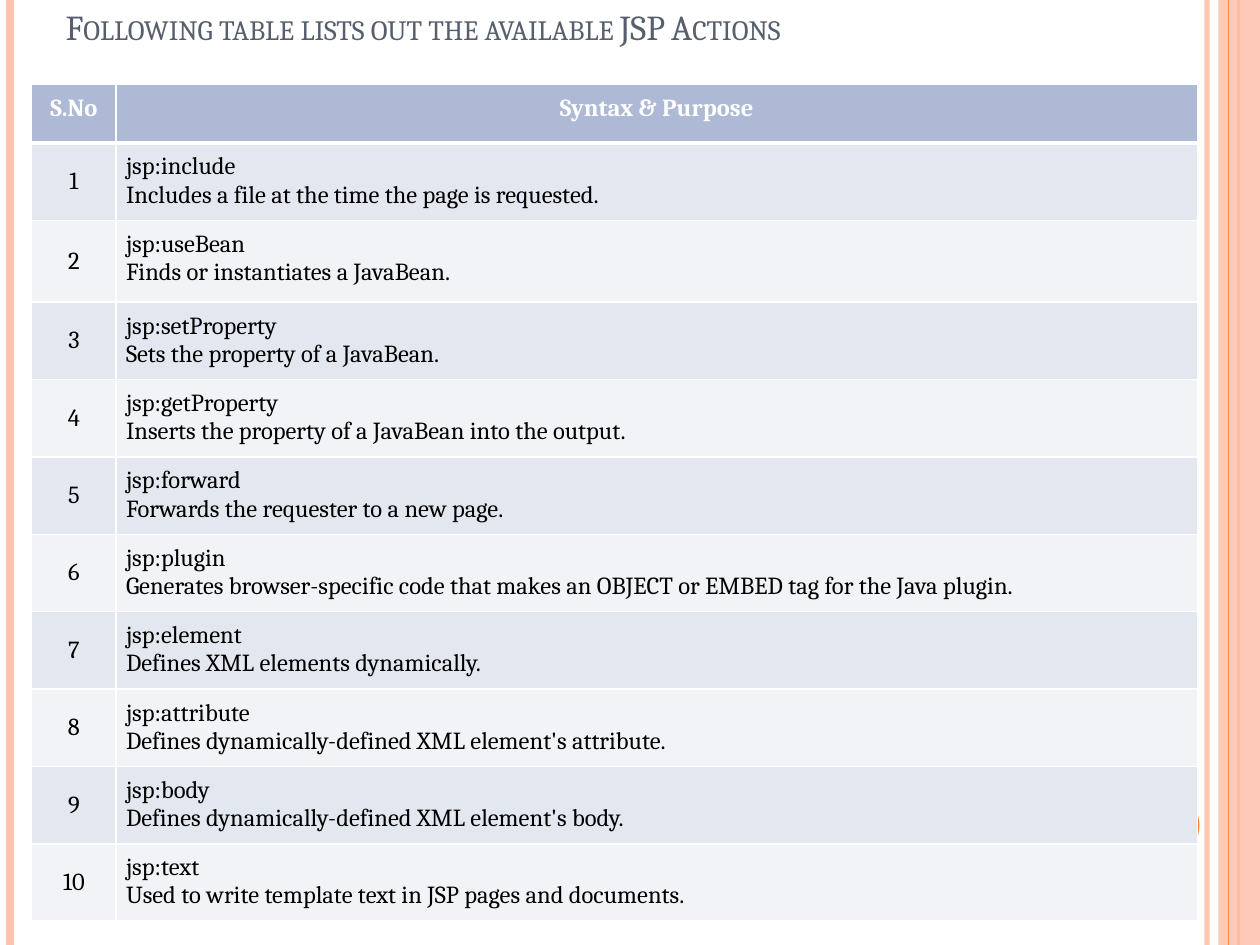
from lxml import etree
from pptx import Presentation
from pptx import util as u
from pptx.dml.color import RGBColor
from pptx.enum import shapes, text
from pptx.oxml.ns import qn

COLORS = {
    "peach": "FEC3AE", "orange": "FE8637", "title": "575F6D",
    "header": "AEBAD5", "odd": "E3E7EF", "even": "F2F3F7",
    "white": "FFFFFF", "black": "000000",
}
FONT = "Cambria"
SLIDE_WIDTH, SLIDE_HEIGHT = u.Cm(25.4), u.Cm(19.05)
ACTIONS = [
    ("jsp:include", "Includes a file at the time the page is requested."),
    ("jsp:useBean", "Finds or instantiates a JavaBean."),
    ("jsp:setProperty", "Sets the property of a JavaBean."),
    ("jsp:getProperty", "Inserts the property of a JavaBean into the output."),
    ("jsp:forward", "Forwards the requester to a new page."),
    ("jsp:plugin", "Generates browser-specific code that makes an OBJECT or EMBED tag for the Java plugin."),
    ("jsp:element", "Defines XML elements dynamically."),
    ("jsp:attribute", "Defines dynamically-defined XML element's attribute."),
    ("jsp:body", "Defines dynamically-defined XML element's body."),
    ("jsp:text", "Used to write template text in JSP pages and documents."),
]


def rgb(name):
    return RGBColor.from_string(COLORS[name])


def set_opacity(properties, percent):
    color = next(properties.iter(qn("a:srgbClr")))
    etree.SubElement(color, qn("a:alpha"), val=str(percent * 1000))


def add_stripe(slide, x, color, width, opacity=100):
    line = slide.shapes.add_connector(
        shapes.MSO_CONNECTOR.STRAIGHT, u.Cm(x), 0, u.Cm(x), SLIDE_HEIGHT)
    line.line.color.rgb = rgb(color)
    line.line.width = u.Pt(width)
    properties = line._element.spPr
    etree.SubElement(properties, qn("a:effectLst"))
    if opacity < 100:
        set_opacity(properties, opacity)


def add_block(slide, kind, box, color, opacity=100):
    shape = slide.shapes.add_shape(kind, *(u.Cm(length) for length in box))
    shape.shadow.inherit = False
    shape.fill.solid()
    shape.fill.fore_color.rgb = rgb(color)
    shape.line.fill.background()
    if opacity < 100:
        set_opacity(shape._element.spPr, opacity)


def set_font(font, size, color, bold=False):
    font.name = FONT
    font.size = u.Pt(size)
    font.bold = bold
    font.color.rgb = rgb(color)


def set_title(slide, wording):
    title = slide.shapes.title
    title.left, title.top, title.width, title.height = (
        u.Cm(1.07), 0, u.Cm(23.28), u.Cm(2.54))
    frame = title.text_frame
    frame.text = wording
    frame.vertical_anchor = text.MSO_ANCHOR.TOP
    frame.margin_top = u.Cm(0.12)
    paragraph = frame.paragraphs[0]
    paragraph.alignment = text.PP_ALIGN.LEFT
    set_font(paragraph.font, 20, "title")
    paragraph.runs[0].font._element.set("cap", "small")


def set_borders(cell, bottom_width):
    properties = cell._tc.get_or_add_tcPr()
    for side, width in (("L", 1), ("R", 1), ("T", 1), ("B", bottom_width)):
        border = etree.SubElement(properties, qn(f"a:ln{side}"), w=str(u.Pt(width)))
        fill = etree.SubElement(border, qn("a:solidFill"))
        etree.SubElement(fill, qn("a:srgbClr"), val=COLORS["white"])


def fill_cell(cell, lines, fill, alignment, anchor, header=False):
    set_borders(cell, 3 if header else 1)
    cell.fill.solid()
    cell.fill.fore_color.rgb = rgb(fill)
    cell.vertical_anchor = anchor
    cell.margin_left = cell.margin_right = u.Cm(0.2)
    cell.margin_top = cell.margin_bottom = u.Cm(0.2)
    cell.text_frame.text = "\n".join(lines)
    for paragraph in cell.text_frame.paragraphs:
        paragraph.alignment = alignment
        set_font(paragraph.font, 14, "white" if header else "black", header)


def add_actions_table(slide):
    heights = [1.18] + [1.56] * len(ACTIONS)
    heights[2] = 1.65
    table = slide.shapes.add_table(
        len(heights), 2, u.Cm(0.64), u.Cm(1.7), u.Cm(23.5), u.Cm(sum(heights))).table
    table.horz_banding = False
    for column, width in zip(table.columns, (1.7, 21.8)):
        column.width = u.Cm(width)
    for row, height in zip(table.rows, heights):
        row.height = u.Cm(height)

    center, justify = text.PP_ALIGN.CENTER, text.PP_ALIGN.JUSTIFY
    top, middle = text.MSO_ANCHOR.TOP, text.MSO_ANCHOR.MIDDLE
    for column, heading in enumerate(("S.No", "Syntax & Purpose")):
        fill_cell(table.cell(0, column), [heading], "header", center, top, header=True)
    for number, action in enumerate(ACTIONS, start=1):
        fill = "odd" if number % 2 else "even"
        fill_cell(table.cell(number, 0), [str(number)], fill, center, middle)
        fill_cell(table.cell(number, 1), action, fill, justify, top)


def main():
    presentation = Presentation()
    presentation.slide_width, presentation.slide_height = SLIDE_WIDTH, SLIDE_HEIGHT
    slide = presentation.slides.add_slide(presentation.slide_layouts[5])

    # Stripes and dot along the edges
    add_stripe(slide, 24.33, "peach", 3, opacity=93)
    add_stripe(slide, 0.2, "peach", 4.5)
    add_stripe(slide, 24.97, "orange", 1.5)
    add_block(slide, shapes.MSO_SHAPE.RECTANGLE, (24.56, 0, 0.84, 19.05), "peach", opacity=87)
    add_stripe(slide, 24.77, "orange", 0.75)
    add_block(slide, shapes.MSO_SHAPE.OVAL, (22.66, 15.88, 1.52, 1.52), "orange")

    # Title and table
    set_title(slide, "Following table lists out the available JSP Actions")
    add_actions_table(slide)
    presentation.save("out.pptx")


if __name__ == "__main__":
    main()
